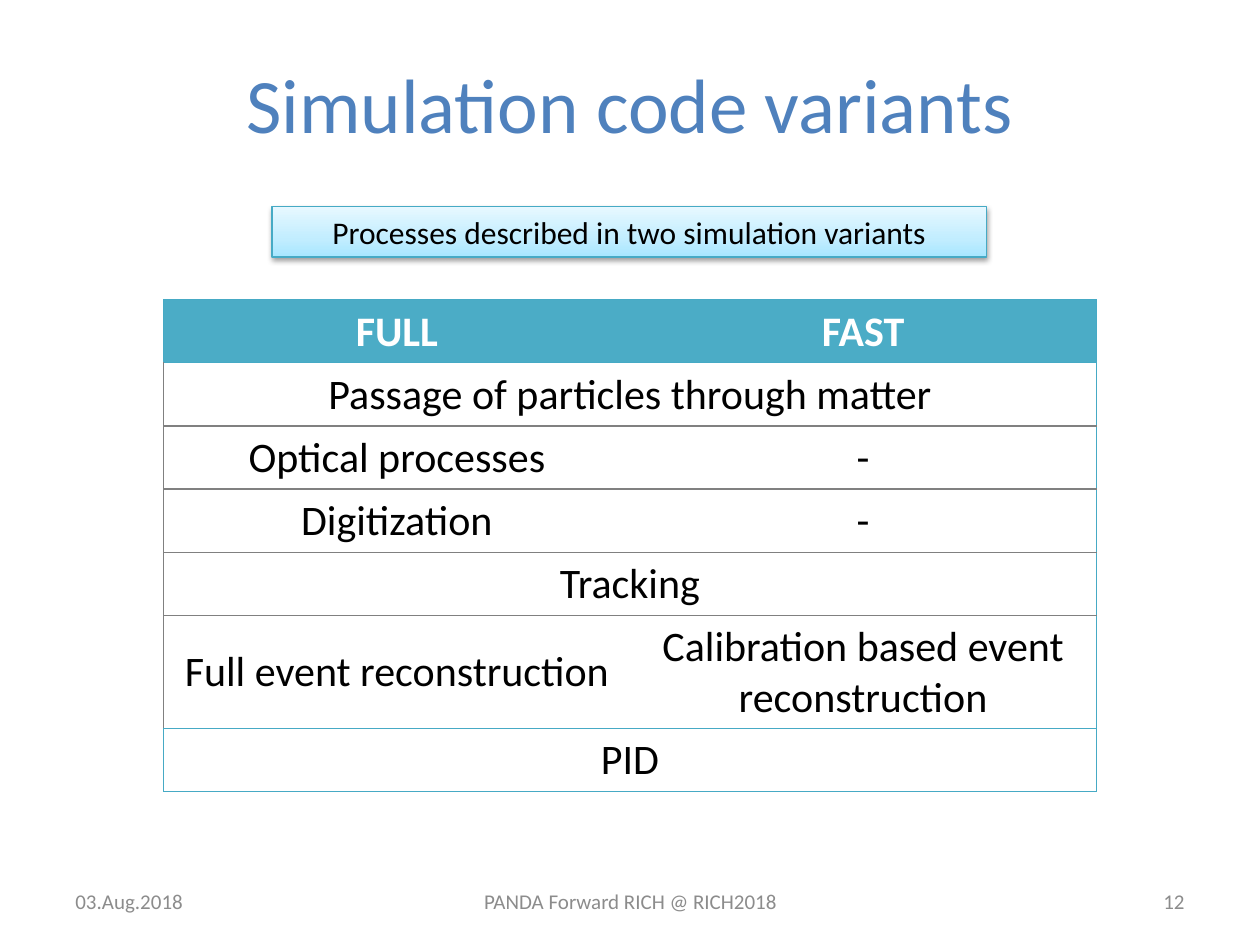
from copy import deepcopy

from pptx import Presentation
from pptx.dml.color import RGBColor
from pptx.enum.shapes import MSO_SHAPE
from pptx.enum.text import MSO_ANCHOR, PP_ALIGN
from pptx.oxml import parse_xml
from pptx.oxml.ns import nsdecls
from pptx.util import Inches, Pt

HUES = {
    "title": "4F81BD", "foot": "8C8C8C", "text": "000000", "white": "FFFFFF",
    "teal": "46AAC5", "head": "4BACC6", "rule": "808080",
    "deep": "A7E6FF", "mid": "C1EDFF", "pale": "E7F8FF",
}
FONT = "Calibri"
LEFT, MID, RIGHT = PP_ALIGN.LEFT, PP_ALIGN.CENTER, PP_ALIGN.RIGHT


def color(name):
    return RGBColor.from_string(HUES[name])


class Deck:
    """Holds the style and the current slide."""

    def __init__(self, wide, high):
        self.prs = Presentation()
        self.prs.slide_width, self.prs.slide_height = Inches(wide), Inches(high)
        self.slide = self.prs.slides.add_slide(self.prs.slide_layouts[6])

    def put(self, frame, text, size, hue, align=MID, bold=False):
        frame.word_wrap = True
        para = frame.paragraphs[0]
        para.alignment = align
        run = para.add_run()
        run.text = text
        run.font.name, run.font.size, run.font.bold = FONT, Pt(size), bold
        run.font.color.rgb = color(hue)

    def label(self, box, text, size, hue, align=MID):
        frame = self.slide.shapes.add_textbox(*map(Inches, box)).text_frame
        frame.vertical_anchor = MSO_ANCHOR.MIDDLE
        self.put(frame, text, size, hue, align)

    def banner(self, box, text, size, stops):
        shape = self.slide.shapes.add_shape(MSO_SHAPE.RECTANGLE, *map(Inches, box))
        # Gradient running upward, with a third stop
        shape.fill.gradient()
        shape.fill.gradient_angle = 90
        first = shape.fill.gradient_stops[0]._gs
        first.addnext(deepcopy(first))
        for stop, (place, hue) in zip(shape.fill.gradient_stops, stops):
            stop.position = place
            stop.color.rgb = color(hue)
        shape.line.color.rgb = color("teal")
        shape.line.width = Pt(0.75)
        # Soft shadow below
        shape._element.spPr.append(parse_xml(
            f'<a:effectLst {nsdecls("a")}><a:outerShdw blurRad="{Pt(3.1)}" '
            f'dist="{Pt(1.6)}" dir="5400000" rotWithShape="0">'
            '<a:srgbClr val="000000"><a:alpha val="38000"/></a:srgbClr>'
            '</a:outerShdw></a:effectLst>'))
        self.put(shape.text_frame, text, size, "text")

    def edge(self, cell, sides):
        """Draw the sides in L, R, T, B order; None leaves a side open."""
        props = cell._tc.get_or_add_tcPr()
        for spot, (side, hue) in enumerate(zip("LRTB", sides)):
            fill = (f'<a:solidFill><a:srgbClr val="{HUES[hue]}"/></a:solidFill>'
                    if hue else "<a:noFill/>")
            props.insert(spot, parse_xml(
                f'<a:ln{side} {nsdecls("a")} w="{Pt(0.75)}">{fill}</a:ln{side}>'))

    def table(self, box, rows, highs, size):
        grid = self.slide.shapes.add_table(len(rows), 2, *map(Inches, box)).table
        grid.horz_banding = False
        last = len(rows) - 1
        # Rules between rows; the outer ones and the last one are teal
        rules = ["teal"] * 2 + ["rule"] * (last - 2) + ["teal"] * 2
        for row, (texts, high) in enumerate(zip(rows, highs)):
            grid.rows[row].height = Inches(high)
            span = len(texts) == 1
            side = "teal" if row in (0, last) else "rule"
            for col in range(2):
                cell = grid.cell(row, col)
                if row == 0:
                    cell.fill.solid()
                    cell.fill.fore_color.rgb = color("head")
                else:
                    cell.fill.background()
                self.edge(cell, (None if col else side,
                                 "teal" if col or span else None,
                                 rules[row], rules[row + 1]))
            if span:
                grid.cell(row, 0).merge(grid.cell(row, 1))
            for col, text in enumerate(texts):
                cell = grid.cell(row, col)
                cell.vertical_anchor = MSO_ANCHOR.MIDDLE if row else MSO_ANCHOR.TOP
                self.put(cell.text_frame, text, size,
                         "text" if row else "white", bold=row == 0)


def main():
    deck = Deck(10, 7.5)

    # Title and footer
    deck.label((0.5, 0.19, 9, 1.25), "Simulation code variants", 44, "title")
    for left, wide, text, align in (
        (0.5, 2.33, "03.Aug.2018", LEFT),
        (3.42, 3.17, "PANDA Forward RICH @ RICH2018", MID),
        (7.17, 2.33, "12", RIGHT),
    ):
        deck.label((left, 6.95, wide, 0.4), text, 12, "foot", align)

    # Comparison table; a single text spans both columns
    rows = [
        ("FULL", "FAST"),
        ("Passage of particles through matter",),
        ("Optical processes", "-"),
        ("Digitization", "-"),
        ("Tracking",),
        ("Full event reconstruction", "Calibration based event reconstruction"),
        ("PID",),
    ]
    deck.table((1.3, 2.38, 7.4, 3.9), rows, [0.5] * 5 + [0.9, 0.5], 24)

    # Banner above the table
    deck.banner((2.16, 1.64, 5.67, 0.4),
                "Processes described in two simulation variants", 18,
                ((0, "deep"), (0.35, "mid"), (1, "pale")))

    deck.prs.save("out.pptx")


if __name__ == "__main__":
    main()
